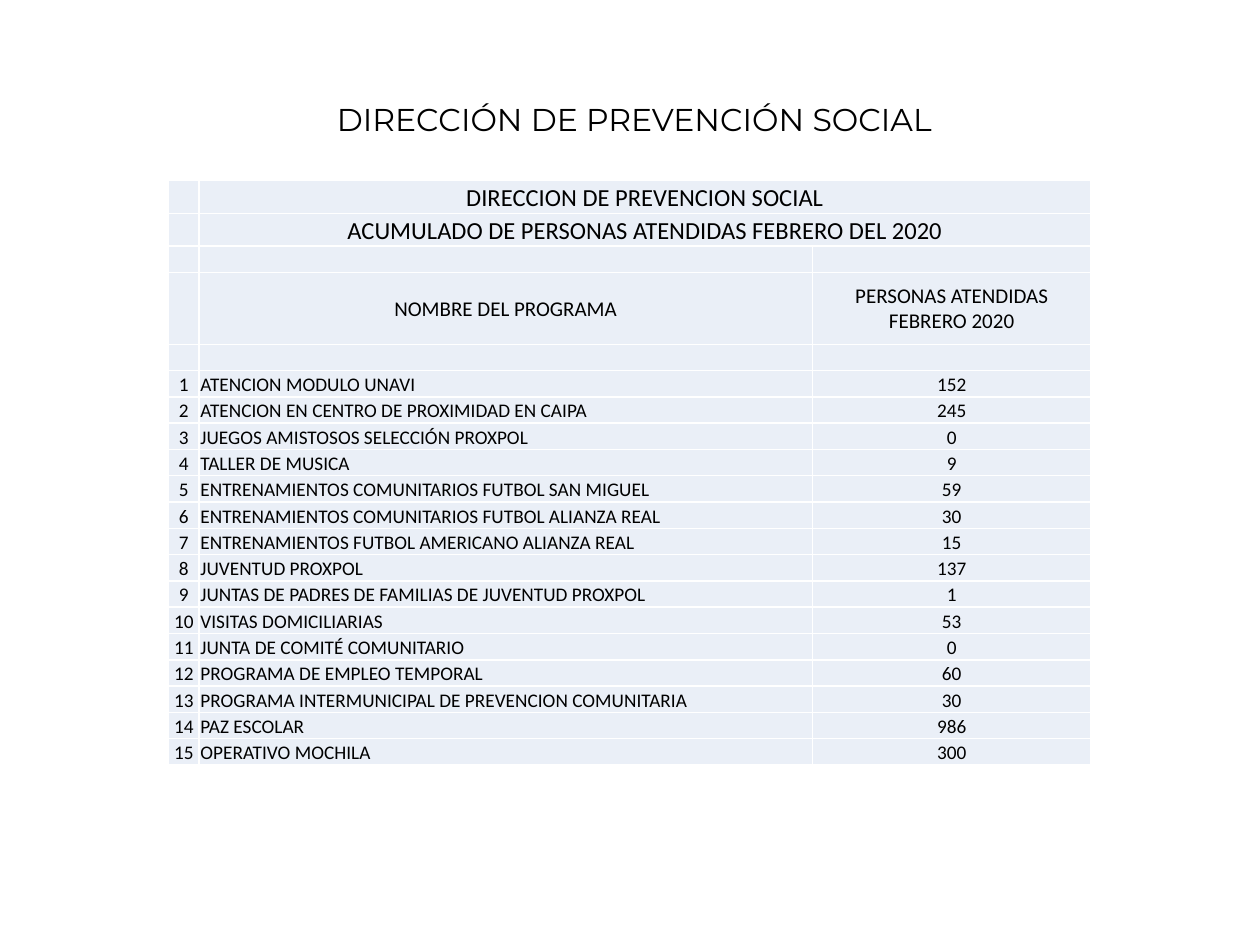
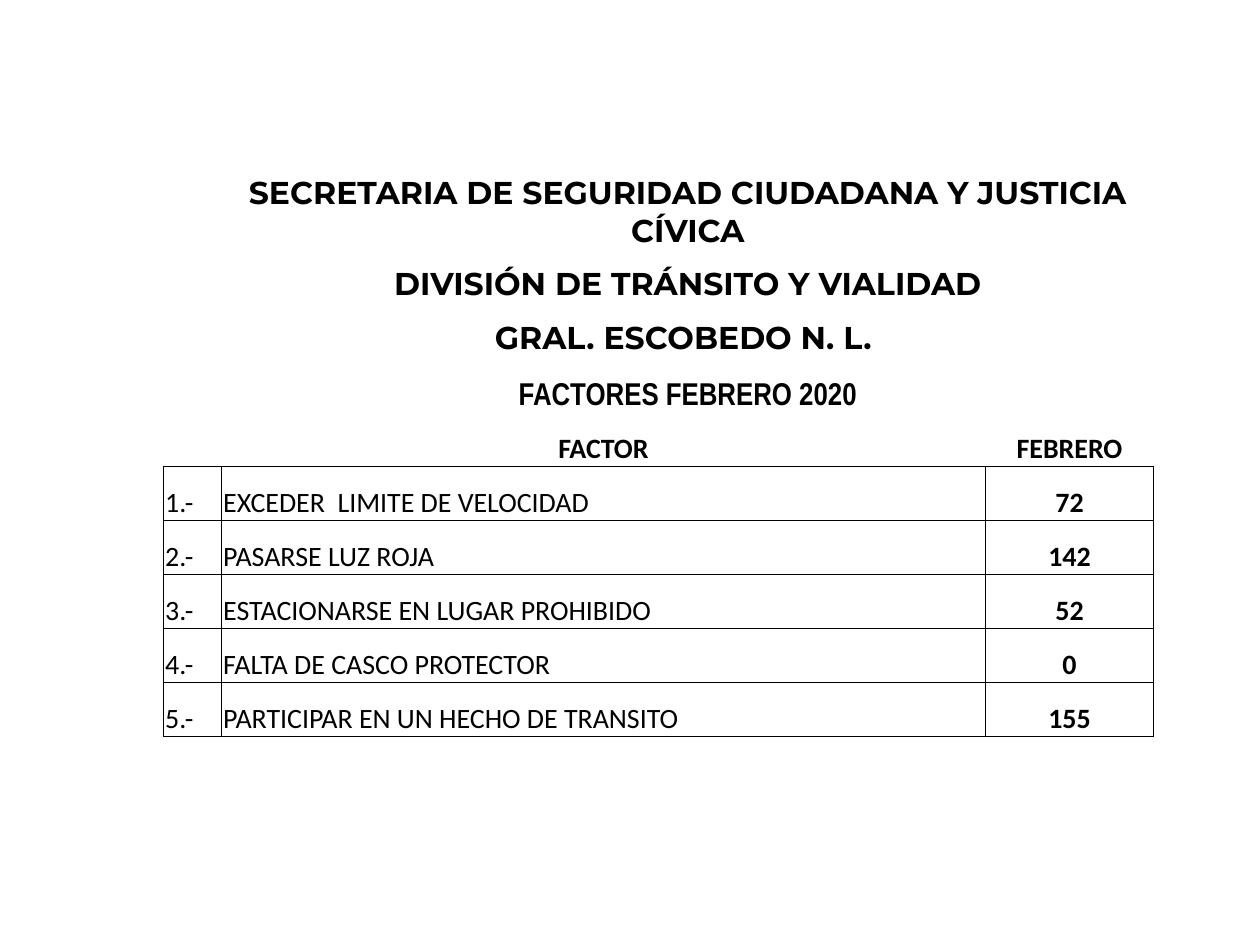
from dataclasses import dataclass

import lxml.etree
import pptx
import pptx.dml.color
import pptx.enum.text
import pptx.oxml.ns
import pptx.util

Cm = pptx.util.Cm
Align = pptx.enum.text.PP_ALIGN
Anchor = pptx.enum.text.MSO_ANCHOR


@dataclass(frozen=True)
class Theme:
    ink: str = "000000"
    white: str = "FFFFFF"
    pale_blue: str = "EAEFF7"
    heading_font: str = "Montserrat"
    narrow_font: str = "Arial Narrow"
    body_font: str = "Calibri"
    heading_size: float = 18
    factor_size: float = 16
    banner_size: float = 14
    label_size: float = 12
    entry_size: float = 11
    plain_table_style: str = "{2D5ABB26-0587-4C30-8999-92F81FD0307C}"


@dataclass(frozen=True)
class Box:
    left: float
    top: float
    width: float
    height: float

    def lengths(self):
        return Cm(self.left), Cm(self.top), Cm(self.width), Cm(self.height)


THEME = Theme()
ALL_SIDES = ("lnL", "lnR", "lnT", "lnB")

PROGRAMS = (
    ("ATENCION MODULO UNAVI", 152),
    ("ATENCION EN CENTRO DE PROXIMIDAD EN CAIPA", 245),
    ("JUEGOS AMISTOSOS SELECCIÓN PROXPOL", 0),
    ("TALLER DE MUSICA", 9),
    ("ENTRENAMIENTOS COMUNITARIOS FUTBOL SAN MIGUEL", 59),
    ("ENTRENAMIENTOS COMUNITARIOS FUTBOL ALIANZA REAL", 30),
    ("ENTRENAMIENTOS FUTBOL AMERICANO ALIANZA REAL", 15),
    ("JUVENTUD PROXPOL", 137),
    ("JUNTAS DE PADRES DE FAMILIAS DE JUVENTUD PROXPOL", 1),
    ("VISITAS DOMICILIARIAS", 53),
    ("JUNTA DE COMITÉ COMUNITARIO", 0),
    ("PROGRAMA DE EMPLEO TEMPORAL", 60),
    ("PROGRAMA INTERMUNICIPAL DE PREVENCION COMUNITARIA", 30),
    ("PAZ ESCOLAR", 986),
    ("OPERATIVO MOCHILA", 300),
)

FACTORS = (
    ("EXCEDER  LIMITE DE VELOCIDAD", 72),
    ("PASARSE LUZ ROJA", 142),
    ("ESTACIONARSE EN LUGAR PROHIBIDO", 52),
    ("FALTA DE CASCO PROTECTOR", 0),
    ("PARTICIPAR EN UN HECHO DE TRANSITO", 155),
)


def write_text(text_frame, text, font=THEME.body_font, size=THEME.entry_size,
               bold=False, align=Align.CENTER):
    paragraph = text_frame.paragraphs[0]
    paragraph.alignment = align
    run = paragraph.add_run()
    run.text = str(text)
    run.font.name = font
    run.font.size = pptx.util.Pt(size)
    run.font.bold = bold
    run.font.color.rgb = pptx.dml.color.RGBColor.from_string(THEME.ink)


def set_empty_size(cell):
    paragraph = cell.text_frame.paragraphs[0]
    end = lxml.etree.SubElement(paragraph._p, pptx.oxml.ns.qn("a:endParaRPr"))
    end.set("sz", str(THEME.entry_size * 100))


def set_borders(cell, sides, color, points):
    properties = cell._tc.get_or_add_tcPr()
    for side in sides:
        line = lxml.etree.SubElement(properties, pptx.oxml.ns.qn(f"a:{side}"))
        line.set("w", str(pptx.util.Pt(points)))
        fill = lxml.etree.SubElement(line, pptx.oxml.ns.qn("a:solidFill"))
        lxml.etree.SubElement(fill, pptx.oxml.ns.qn("a:srgbClr")).set("val", color)


def add_plain_table(slide, box, column_widths, row_heights):
    shape = slide.shapes.add_table(
        len(row_heights), len(column_widths), *box.lengths())
    table = shape.table
    table.first_row = False
    table.horz_banding = False
    style = table._tbl.tblPr.find(pptx.oxml.ns.qn("a:tableStyleId"))
    style.text = THEME.plain_table_style
    for column, width in zip(table.columns, column_widths):
        column.width = Cm(width)
    for row, height in zip(table.rows, row_heights):
        row.height = Cm(height)
    for cell in table.iter_cells():
        cell.margin_left = cell.margin_right = cell.margin_top = Cm(0.03)
        cell.margin_bottom = 0
        cell.vertical_anchor = Anchor.BOTTOM
    return table


def fill_row(table, row, texts, formats):
    for column, (text, text_format) in enumerate(zip(texts, formats)):
        write_text(table.cell(row, column).text_frame, text, **text_format)


def write_banner(table, row, text, **text_format):
    cell = table.cell(row, 1)
    cell.merge(table.cell(row, 2))
    write_text(cell.text_frame, text, **text_format)


def finish_empty_cells(table):
    for cell in table.iter_cells():
        if not cell.text_frame.text:
            set_empty_size(cell)


def add_title(slide, box, text):
    shape = slide.shapes.add_textbox(*box.lengths())
    shape.text_frame.word_wrap = True
    shape.text_frame.auto_size = pptx.enum.text.MSO_AUTO_SIZE.SHAPE_TO_FIT_TEXT
    write_text(shape.text_frame, text, font=THEME.heading_font,
               size=THEME.heading_size)


def add_program_table(slide, box):
    first_entry = 5
    row_heights = [0.66, 0.66, 0.53, 1.45, 0.53] + [0.53] * len(PROGRAMS)
    table = add_plain_table(slide, box, (0.61, 12.37, 5.61), row_heights)
    banners = ("DIRECCION DE PREVENCION SOCIAL",
               "ACUMULADO DE PERSONAS ATENDIDAS FEBRERO DEL 2020")
    for row, text in enumerate(banners):
        write_banner(table, row, text, size=THEME.banner_size)
    labels = ("NOMBRE DEL PROGRAMA", "PERSONAS ATENDIDAS FEBRERO 2020")
    for column, label in enumerate(labels, start=1):
        cell = table.cell(3, column)
        cell.vertical_anchor = Anchor.MIDDLE
        write_text(cell.text_frame, label, size=THEME.label_size)
    formats = ({}, {"align": Align.LEFT}, {})
    for number, (program, people) in enumerate(PROGRAMS, start=1):
        fill_row(table, first_entry + number - 1,
                 (number, program, people), formats)
    for cell in table.iter_cells():
        set_borders(cell, ALL_SIDES, THEME.white, 1)
        cell.fill.solid()
        cell.fill.fore_color.rgb = pptx.dml.color.RGBColor.from_string(
            THEME.pale_blue)
    finish_empty_cells(table)


def add_factor_table(slide, box):
    label_row = 4
    row_heights = [1.5] + [1.09] * (label_row + len(FACTORS))
    table = add_plain_table(slide, box, (1.17, 15.39, 3.4), row_heights)
    banners = (
        ("SECRETARIA DE SEGURIDAD CIUDADANA Y JUSTICIA CÍVICA", THEME.heading_font),
        ("DIVISIÓN DE TRÁNSITO Y VIALIDAD", THEME.heading_font),
        ("GRAL. ESCOBEDO N. L. ", THEME.heading_font),
        ("FACTORES FEBRERO 2020", THEME.narrow_font),
    )
    for row, (text, font) in enumerate(banners):
        write_banner(table, row, text, font=font, size=THEME.heading_size,
                     bold=True)
    strong = {"size": THEME.factor_size, "bold": True}
    plain = {"size": THEME.factor_size, "align": Align.LEFT}
    for column, label in enumerate(("FACTOR", "FEBRERO"), start=1):
        write_text(table.cell(label_row, column).text_frame, label, **strong)
    for number, (factor, count) in enumerate(FACTORS, start=1):
        fill_row(table, label_row + number, (f"{number}.-", factor, count),
                 (plain, plain, strong))
    for row in range(len(row_heights)):
        for column in range(3):
            cell = table.cell(row, column)
            if row == label_row:
                set_borders(cell, ("lnB",), THEME.ink, 0.5)
            elif row > label_row:
                set_borders(cell, ALL_SIDES, THEME.ink, 0.5)
            cell.fill.background()
    finish_empty_cells(table)


def add_prevention_slide(presentation):
    slide = presentation.slides.add_slide(presentation.slide_layouts[6])
    add_title(slide, Box(4.09, 1.9, 17.4, 1.02),
              "DIRECCIÓN DE PREVENCIÓN SOCIAL")
    add_program_table(slide, Box(3.4, 3.64, 18.59, 11.78))


def add_traffic_slide(presentation):
    slide = presentation.slides.add_slide(presentation.slide_layouts[6])
    add_factor_table(slide, Box(3.3, 3.48, 19.96, 11.31))


def main():
    presentation = pptx.Presentation()
    presentation.slide_width = Cm(25.4)
    presentation.slide_height = Cm(19.05)
    add_prevention_slide(presentation)
    add_traffic_slide(presentation)
    presentation.save("out.pptx")


if __name__ == "__main__":
    main()
